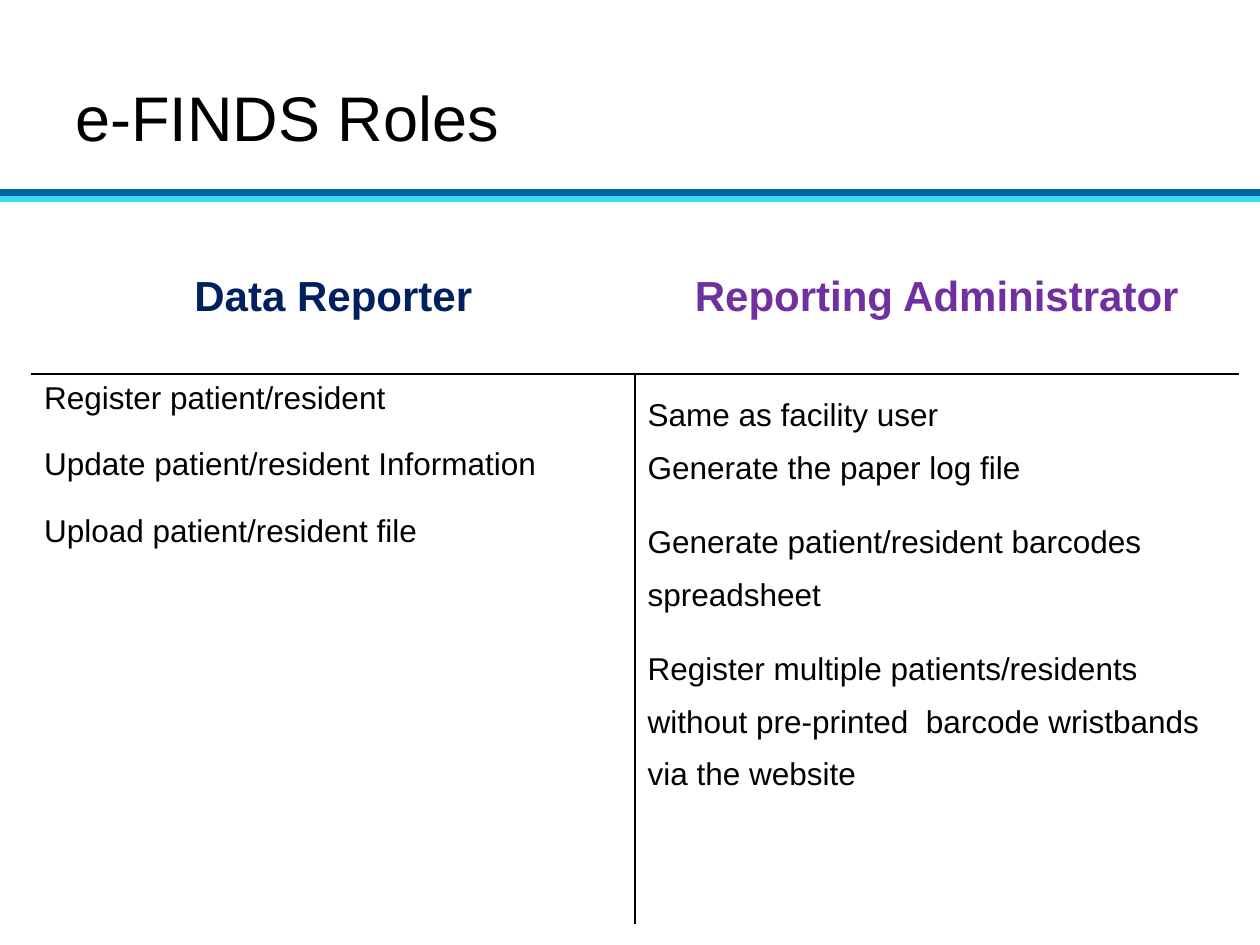
from lxml import etree
from pptx import Presentation
from pptx.dml.color import RGBColor
from pptx.enum.shapes import MSO_CONNECTOR
from pptx.enum.text import MSO_ANCHOR, PP_ALIGN
from pptx.oxml.ns import qn
from pptx.util import Inches, Pt

MIDDLE, TOP = MSO_ANCHOR.MIDDLE, MSO_ANCHOR.TOP
CENTER, LEFT = PP_ALIGN.CENTER, PP_ALIGN.LEFT
STRAIGHT = MSO_CONNECTOR.STRAIGHT

TITLE = "e-FINDS Roles"
ROLES = [
    {
        "name": "Data Reporter", "color": "002060", "spacing": 1.0,
        "tasks": [
            ("Register patient/resident", 0),
            ("Update patient/resident Information", 18),
            ("Upload patient/resident file", 18),
        ],
    },
    {
        "name": "Reporting Administrator", "color": "7030A0", "spacing": 1.5,
        "tasks": [
            ("Same as facility user", 0),
            ("Generate the paper log file", 0),
            ("Generate patient/resident barcodes spreadsheet", 12),
            ("Register multiple patients/residents without pre-printed  "
             "barcode wristbands via the website", 12),
        ],
    },
]
RULES = [(1.54, "00669E", 6), (1.58, "3DD8F2", 3)]  # top, color, weight
THEME = {"font": "Arial", "ink": "000000", "paper": "FFFFFF",
         "title": 36, "head": 24, "body": 18}
WIDTH, HEIGHT = 10, 7.5
COL, ROWS = 4.79, (1.22, 4.36)


def style(par, size, color, bold=False):
    for run in par.runs:
        font = run.font
        font.name, font.size, font.bold = THEME["font"], Pt(size), bold
        font.color.rgb = RGBColor.from_string(color)


def add_rule(slide, top, color, weight):
    rule = slide.shapes.add_connector(
        STRAIGHT, Inches(WIDTH), Inches(top), Inches(0), Inches(top))
    rule.line.color.rgb = RGBColor.from_string(color)
    rule.line.width = Pt(weight)
    etree.SubElement(rule._element.spPr, qn("a:effectLst"))


def add_title(slide):
    box = slide.shapes.add_textbox(
        Inches(0.5), Inches(0.3), Inches(7.75), Inches(1.25))
    frame = box.text_frame
    frame.word_wrap, frame.vertical_anchor = True, MIDDLE
    frame.text = TITLE
    style(frame.paragraphs[0], THEME["title"], THEME["ink"])


def set_borders(cell, dark):
    """Draw 1 pt borders: ink on the sides in dark, paper on the others."""
    props = cell._tc.get_or_add_tcPr()
    for place, side in enumerate("LRTB"):
        line = etree.Element(qn(f"a:ln{side}"), w=str(Pt(1)))
        fill = etree.SubElement(line, qn("a:solidFill"))
        color = THEME["ink" if side in dark else "paper"]
        etree.SubElement(fill, qn("a:srgbClr"), val=color)
        props.insert(place, line)


def fill_cell(cell, lines, size, color, head=False, spacing=1.0):
    frame = cell.text_frame
    frame.text = "\n".join(text for text, _ in lines)
    for par, (_, before) in zip(frame.paragraphs, lines):
        par.alignment = CENTER if head else LEFT
        par.line_spacing = spacing
        par.space_before = Pt(before)
        style(par, size, color, bold=head)
    cell.vertical_anchor = MIDDLE if head else TOP
    cell.fill.background()


def add_roles(slide):
    table = slide.shapes.add_table(
        len(ROWS), len(ROLES), Inches(0.25), Inches(1.75),
        Inches(COL * len(ROLES)), Inches(sum(ROWS))).table
    table.first_row = table.horz_banding = False
    for row, high in zip(table.rows, ROWS):
        row.height = Inches(high)
    for col, (role, inner) in enumerate(zip(ROLES, "RL")):
        table.columns[col].width = Inches(COL)
        head, body = table.cell(0, col), table.cell(1, col)
        fill_cell(head, [(role["name"], 0)], THEME["head"], role["color"], head=True)
        fill_cell(body, role["tasks"], THEME["body"], THEME["ink"],
                  spacing=role["spacing"])
        set_borders(head, "B")
        set_borders(body, "T" + inner)


def main():
    deck = Presentation()
    deck.slide_width, deck.slide_height = Inches(WIDTH), Inches(HEIGHT)
    slide = deck.slides.add_slide(deck.slide_layouts[6])
    for rule in RULES:
        add_rule(slide, *rule)
    add_title(slide)
    add_roles(slide)
    deck.save("out.pptx")


if __name__ == "__main__":
    main()
